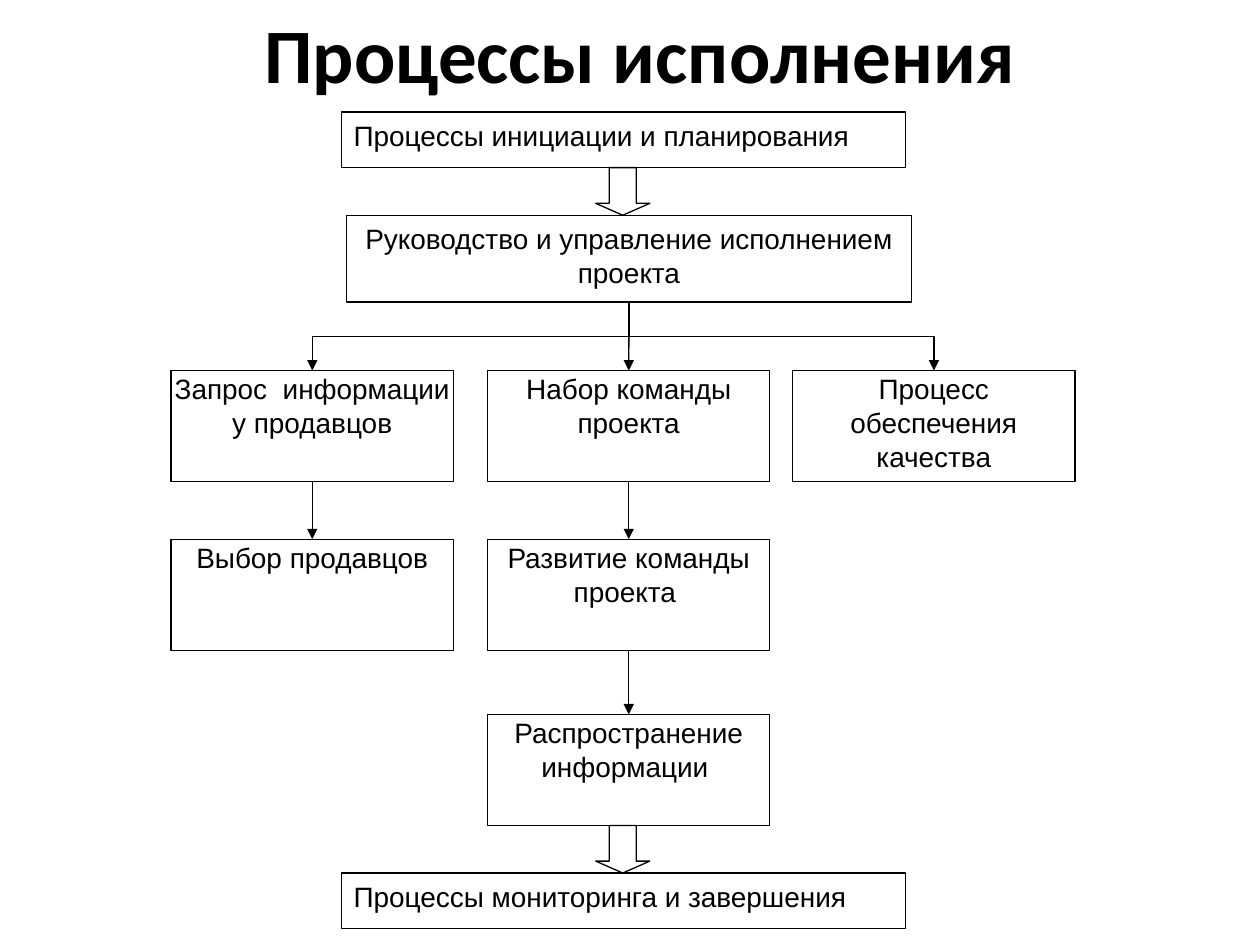
from lxml import etree
from pptx import Presentation
from pptx.dml.color import RGBColor
from pptx.enum.shapes import MSO_CONNECTOR as Connector, MSO_SHAPE as Shape
from pptx.enum.text import MSO_ANCHOR as Anchor, PP_ALIGN as Align
from pptx.oxml.ns import qn
from pptx.util import Cm, Pt

# Content
TITLE = "Процессы исполнения"
# name: text, left, top, height, alignment
WIDE_BOXES = {
    "initiation": ("Процессы инициации и планирования", 6.88, 2.26, 1.12, Align.LEFT),
    "direction": ("Руководство и управление исполнением проекта", 6.99, 4.34, 1.75, Align.CENTER),
    "monitoring": ("Процессы мониторинга и завершения", 6.88, 17.6, 1.12, Align.LEFT),
}
# name: text, column, row
STEPS = {
    "request": ("Запрос  информации у продавцов", 0, 0),
    "recruit": ("Набор команды проекта", 1, 0),
    "quality": ("Процесс обеспечения качества", 2, 0),
    "select": ("Выбор продавцов", 0, 1),
    "develop": ("Развитие команды проекта ", 1, 1),
    "inform": ("Распространение информации ", 1, 2),
}
STRAIGHT_LINKS = [("direction", "recruit"), ("request", "select"),
                  ("recruit", "develop"), ("develop", "inform")]
ELBOW_LINKS = [("direction", "request"), ("direction", "quality")]
BLOCK_ARROWS = [("initiation", "direction"), ("inform", "monitoring")]

# Layout in centimetres
COLUMNS = [3.45, 9.83, 15.98]
ROWS = [7.47, 10.87, 14.4]
STEP_WIDTH, STEP_HEIGHT, WIDE_WIDTH = 5.69, 2.24, 11.38
ARROW_LEFT, ARROW_WIDTH = 12.01, 1.09
BLACK, WHITE = "000000", "FFFFFF"


def color(value):
    return RGBColor.from_string(value)


def add_run(paragraph, text, font, size, bold=False):
    run = paragraph.add_run()
    run.text = text
    run.font.name, run.font.size, run.font.bold = font, Pt(size), bold
    run.font.color.rgb = color(BLACK)


def add_outlined(kind, left, top, width, height):
    shape = slide.shapes.add_shape(kind, left, top, width, height)
    shape.shadow.inherit = False
    shape.fill.solid()
    shape.fill.fore_color.rgb = color(WHITE)
    shape.line.color.rgb = color(BLACK)
    shape.line.width = Pt(0.75)
    return shape


def add_box(text, left, top, width, height, alignment, tight=False):
    shape = add_outlined(Shape.RECTANGLE, Cm(left), Cm(top), Cm(width), Cm(height))
    frame = shape.text_frame
    frame.word_wrap = True
    frame.vertical_anchor = Anchor.TOP
    if tight:
        frame.margin_left = frame.margin_right = 0
        frame.margin_top = frame.margin_bottom = Cm(0.03)
    frame.paragraphs[0].alignment = alignment
    add_run(frame.paragraphs[0], text, "Arial", 16)
    return shape


def add_link(kind, *ends):
    link = slide.shapes.add_connector(kind, *ends)
    link.line.color.rgb = color(BLACK)
    link.line.width = Pt(0.75)
    etree.SubElement(link.line._get_or_add_ln(), qn("a:tailEnd"), type="triangle")
    etree.SubElement(link.element.spPr, qn("a:effectLst"))
    return link


def add_elbow(source, target):
    """Down, across and down: a bent connector turned by a quarter."""
    start_x, start_y = source.left + source.width // 2, source.top + source.height
    end_x, end_y = target.left + target.width // 2, target.top
    middle_x, middle_y = (start_x + end_x) // 2, (start_y + end_y) // 2
    half_width, half_height = (end_y - start_y) // 2, abs(end_x - start_x) // 2
    side = 1 if end_x > start_x else -1
    link = add_link(Connector.ELBOW,
                    middle_x + side * half_width, middle_y - half_height,
                    middle_x - side * half_width, middle_y + half_height)
    degrees = 270 if side > 0 else 90
    link.element.spPr.find(qn("a:xfrm")).set("rot", str(degrees * 60000))


presentation = Presentation()
presentation.slide_width, presentation.slide_height = Cm(25.4), Cm(19.05)
slide = presentation.slides.add_slide(presentation.slide_layouts[5])

# Title
title = slide.shapes.title
title.left, title.top, title.width, title.height = Cm(1.5), Cm(0), Cm(22.81), Cm(2.13)
title.text_frame.vertical_anchor = Anchor.MIDDLE
title.text_frame.paragraphs[0].alignment = Align.CENTER
add_run(title.text_frame.paragraphs[0], TITLE, "Calibri", 44, bold=True)

# Boxes
boxes = {}
for name, (text, left, top, height, alignment) in WIDE_BOXES.items():
    boxes[name] = add_box(text, left, top, WIDE_WIDTH, height, alignment)
for name, (text, column, row) in STEPS.items():
    boxes[name] = add_box(text, COLUMNS[column], ROWS[row], STEP_WIDTH, STEP_HEIGHT,
                          Align.CENTER, tight=True)

# Links between boxes
for source, target in STRAIGHT_LINKS:
    link = add_link(Connector.STRAIGHT, 0, 0, 0, 0)
    link.begin_connect(boxes[source], 2)
    link.end_connect(boxes[target], 0)
for source, target in ELBOW_LINKS:
    add_elbow(boxes[source], boxes[target])

# Block arrows fill the gap between two boxes
for source, target in BLOCK_ARROWS:
    top = boxes[source].top + boxes[source].height
    arrow = add_outlined(Shape.DOWN_ARROW, Cm(ARROW_LEFT), top,
                         Cm(ARROW_WIDTH), boxes[target].top - top)
    arrow.adjustments[0], arrow.adjustments[1] = 0.5, 0.25

presentation.save("out.pptx")
